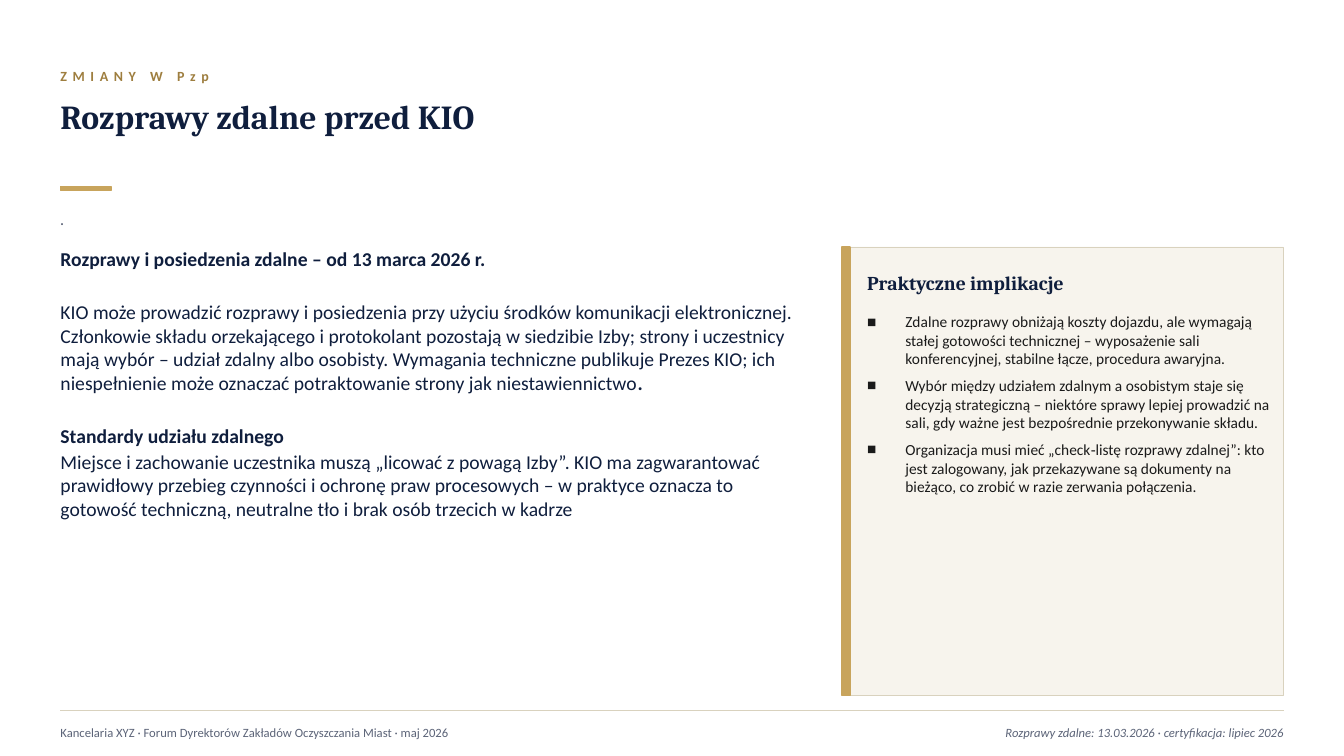
from lxml.etree import SubElement
from pptx import Presentation
from pptx.dml.color import RGBColor
from pptx.enum.shapes import MSO_CONNECTOR as Connector, MSO_SHAPE as Preset
from pptx.enum.text import MSO_ANCHOR as Anchor, MSO_AUTO_SIZE as AutoSize, PP_ALIGN as Align
from pptx.oxml.ns import qn
from pptx.util import Pt

PX = 9144
NAVY, GOLD, GREY, BORDER = "0F1E3D", "C8A45C", "5C6478", "D9D2BE"
LEFT, RIGHT = 60, 1273
CARD_LEFT, CARD_TOP, CARD_HEIGHT = 835, 245, 445
CARD_TEXT = 860

IMPLICATIONS = [
    "Zdalne rozprawy obniżają koszty dojazdu, ale wymagają stałej gotowości technicznej – "
    "wyposażenie sali konferencyjnej, stabilne łącze, procedura awaryjna.",
    "Wybór między udziałem zdalnym a osobistym staje się decyzją strategiczną – niektóre sprawy "
    "lepiej prowadzić na sali, gdy ważne jest bezpośrednie przekonywanie składu.",
    "Organizacja musi mieć „check‑listę rozprawy zdalnej”: kto jest zalogowany, jak przekazywane "
    "są dokumenty na bieżąco, co zrobić w razie zerwania połączenia.",
]
HEARINGS = (
    "KIO może prowadzić rozprawy i posiedzenia przy użyciu środków komunikacji elektronicznej. "
    "Członkowie składu orzekającego i protokolant pozostają w siedzibie Izby; strony i uczestnicy "
    "mają wybór – udział zdalny albo osobisty. Wymagania techniczne publikuje Prezes KIO; ich "
    "niespełnienie może oznaczać potraktowanie strony jak niestawiennictwo"
)
STANDARDS = (
    "Miejsce i zachowanie uczestnika muszą „licować z powagą Izby”. KIO ma zagwarantować prawidłowy "
    "przebieg czynności i ochronę praw procesowych – w praktyce oznacza to gotowość techniczną, "
    "neutralne tło i brak osób trzecich w kadrze"
)


def color(value):
    return RGBColor.from_string(value)


def place(box, left, top, width, height, anchor=Anchor.TOP):
    box.left, box.top, box.width, box.height = (n * PX for n in (left, top, width, height))
    frame = box.text_frame
    frame.word_wrap = True
    frame.auto_size = AutoSize.NONE
    frame.vertical_anchor = anchor
    frame.margin_left = frame.margin_top = frame.margin_right = frame.margin_bottom = 0
    return box


def add_box(page, left, top, width, height, anchor=Anchor.MIDDLE):
    return place(page.shapes.add_textbox(0, 0, 0, 0), left, top, width, height, anchor)


def add_span(para, text, size=14, fill=NAVY, font="Calibri", bold=False, italic=False, spacing=0):
    span = para.add_run()
    span.text = text
    span.font.size = Pt(size)
    span.font.name = font
    span.font.color.rgb = color(fill)
    span.font.bold = bold
    span.font.italic = italic
    if spacing:
        span._r.get_or_add_rPr().set("spc", str(spacing * 100))


def add_text(box, text, before=0, after=0, align=Align.LEFT, bullet=None, **style):
    para = box.text_frame.paragraphs[0]
    if para.runs:
        para = box.text_frame.add_paragraph()
    para.alignment = align
    para.space_before = Pt(before)
    para.space_after = Pt(after)
    if bullet:
        props = para._p.get_or_add_pPr()
        props.set("marL", str(38 * PX))
        props.set("indent", str(-38 * PX))
        SubElement(props, qn("a:buChar")).set("char", bullet)
    add_span(para, text, **style)
    return para


def add_rectangle(page, left, top, width, height, fill, border, weight):
    shape = page.shapes.add_shape(Preset.RECTANGLE, left * PX, top * PX, width * PX, height * PX)
    shape.shadow.inherit = False
    shape.fill.solid()
    shape.fill.fore_color.rgb = color(fill)
    shape.line.color.rgb = color(border)
    shape.line.width = Pt(weight)


def add_rule(page, left, right, top):
    rule = page.shapes.add_connector(Connector.STRAIGHT, left * PX, top * PX, right * PX, top * PX)
    rule.line.color.rgb = color(BORDER)
    rule.line.width = Pt(0.75)
    SubElement(rule._element.spPr, qn("a:effectLst"))


def add_header(page):
    kicker = add_box(page, LEFT, 60, 1000, 30)
    add_text(kicker, "ZMIANY W Pzp", size=10, fill="9E7E3F", bold=True, spacing=4)
    title = place(page.shapes.title, LEFT, 95, 1210, 85)
    add_text(title, "Rozprawy zdalne przed KIO", size=24, font="Cambria", bold=True)
    add_rectangle(page, LEFT, 185, 50, 4, GOLD, GOLD, 1)
    add_text(add_box(page, LEFT, 200, 1210, 35), ".", size=12, fill=GREY, italic=True)


def add_article(page):
    article = add_box(page, LEFT, CARD_TOP, 740, CARD_HEIGHT, Anchor.TOP)
    add_text(article, "Rozprawy i posiedzenia zdalne – od 13 marca 2026 r.", after=2, bold=True)
    add_span(add_text(article, HEARINGS, before=19, after=2), ".", bold=True)
    add_text(article, "Standardy udziału zdalnego", before=19, after=2, bold=True)
    add_text(article, STANDARDS, after=2)


def add_card(page, body):
    add_rectangle(page, CARD_LEFT, CARD_TOP, RIGHT - CARD_LEFT, CARD_HEIGHT, "F7F4ED", BORDER, 0.5)
    add_rectangle(page, CARD_LEFT, CARD_TOP, 8, CARD_HEIGHT, GOLD, GOLD, 1)
    heading = add_box(page, CARD_TEXT, 260, 400, 40)
    add_text(heading, "Praktyczne implikacje", font="Cambria", bold=True)
    place(body, CARD_TEXT, 310, 400, 365)
    page.shapes.element.append(body.element)
    for item in IMPLICATIONS:
        add_text(body, item, after=6, bullet="■", size=11, fill="1A1A1A")


def add_footer(page):
    add_rule(page, LEFT, RIGHT, 705)
    source = add_box(page, LEFT, 712, 900, 30)
    add_text(source, "Kancelaria XYZ · Forum Dyrektorów Zakładów Oczyszczania Miast · maj 2026",
             size=9, fill=GREY)
    dates = add_box(page, 840, 712, RIGHT - 840, 30)
    add_text(dates, "Rozprawy zdalne: 13.03.2026 · certyfikacja: lipiec 2026",
             align=Align.RIGHT, size=9, fill=GREY, italic=True)


def main():
    deck = Presentation()
    deck.slide_width, deck.slide_height = 1333 * PX, 750 * PX
    page = deck.slides.add_slide(deck.slide_layouts[1])
    add_header(page)
    add_article(page)
    add_card(page, page.placeholders[1])
    add_footer(page)
    deck.save("out.pptx")


if __name__ == "__main__":
    main()
